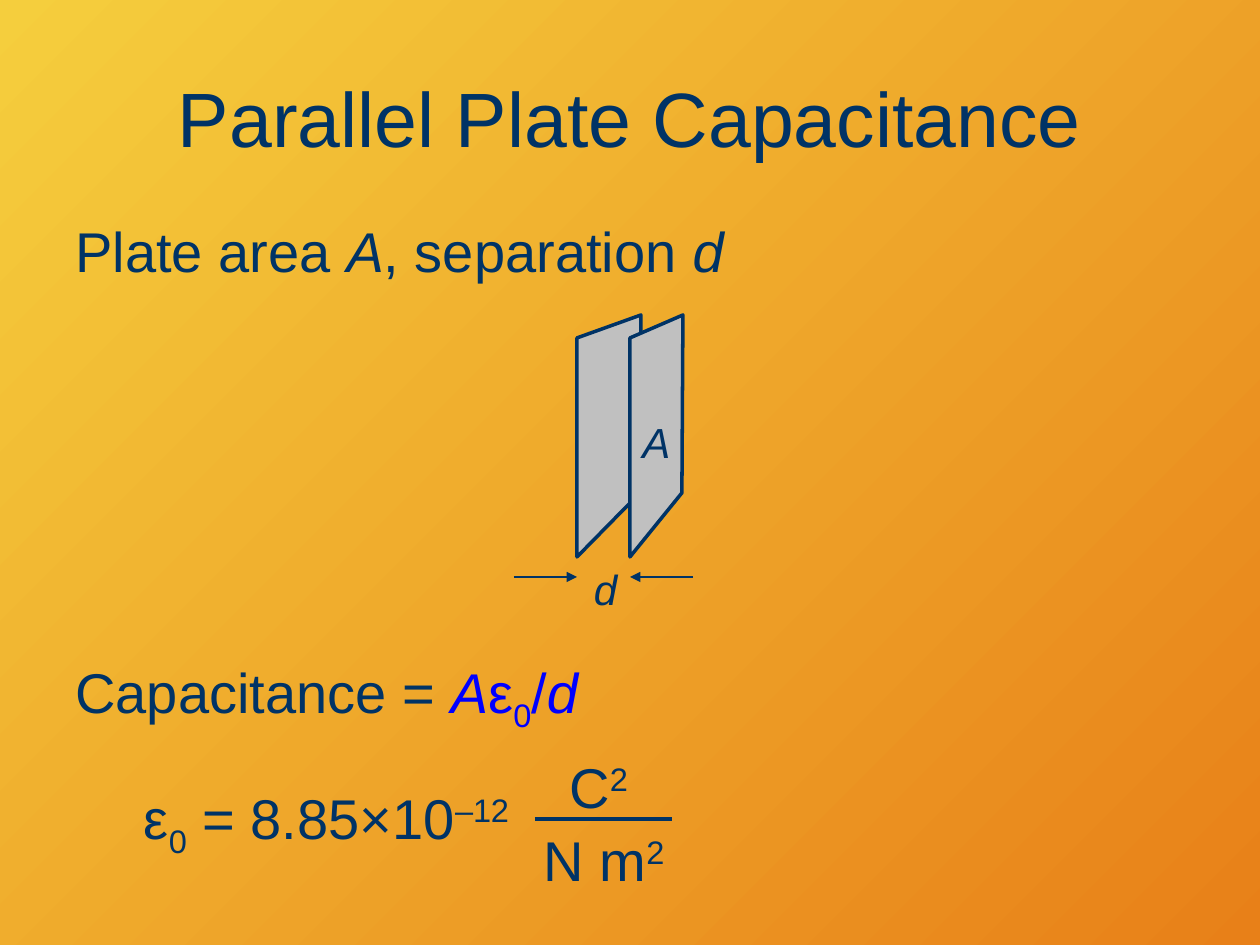
from lxml import etree
from pptx import Presentation
from pptx import util as u
from pptx.dml.color import RGBColor
from pptx.enum import shapes, text
from pptx.oxml.ns import qn

PX = 914400 / 126
NAVY = RGBColor(0x00, 0x33, 0x66)
BLUE = RGBColor(0x00, 0x00, 0xFF)
SILVER = RGBColor(0xC0, 0xC0, 0xC0)
GRADIENT = [RGBColor(0xF5, 0xCE, 0x3D), RGBColor(0xE8, 0x80, 0x18)]

PLAIN = {"color": NAVY}
ITALIC = {"color": NAVY, "italic": True}
RESULT = {"color": BLUE}
RESULT_ITALIC = {"color": BLUE, "italic": True}
RESULT_SUB = {"color": BLUE, "baseline": -25000}
SUB = {"color": NAVY, "baseline": -25000}
SUPER = {"color": NAVY, "baseline": 30000}

LEFT, CENTER = text.PP_ALIGN.LEFT, text.PP_ALIGN.CENTER
TOP, MIDDLE = text.MSO_ANCHOR.TOP, text.MSO_ANCHOR.MIDDLE

PLATES = [
    [(577, 338), (577, 557), (640, 493), (641, 315)],
    [(630, 338), (630, 557), (682, 493), (683, 315)],
]

LINES = [
    ((514, 577), (577, 577), 1.5, True),
    ((693, 577), (630, 577), 1.5, True),
    ((535, 819), (672, 819), 2.25, False),
]

TEXTS = [
    ((63, 38, 1134, 157), 44, CENTER, MIDDLE, True,
     [("Parallel Plate Capacitance", PLAIN)]),
    ((63, 210, 1134, 84), 32, LEFT, TOP, True,
     [("Plate area ", PLAIN), ("A", ITALIC), (", separation ", PLAIN), ("d", ITALIC)]),
    ((581, 557, 49, 63), 24, CENTER, TOP, False, [("d", ITALIC)]),
    ((630, 410, 53, 63), 24, LEFT, TOP, False, [("A", ITALIC)]),
    ((63, 651, 1134, 84), 32, LEFT, TOP, True,
     [("Capacitance = ", PLAIN), ("A", RESULT_ITALIC), ("ε", RESULT),
      ("0", RESULT_SUB), ("/", RESULT), ("d", RESULT_ITALIC)]),
    ((116, 777, 514, 84), 32, LEFT, TOP, True,
     [(" ε", PLAIN), ("0", SUB), (" = 8.85×10", PLAIN), ("–12", SUPER)]),
    ((546, 746, 105, 84), 32, CENTER, TOP, True, [("C", PLAIN), ("2", SUPER)]),
    ((525, 819, 158, 84), 32, CENTER, TOP, True, [("N m", PLAIN), ("2", SUPER)]),
]


def emu(*lengths):
    return [u.Emu(round(length * PX)) for length in lengths]


def paint_background(slide):
    fill = slide.background.fill
    fill.gradient()
    fill.gradient_angle = 315
    for stop, color in zip(fill.gradient_stops, GRADIENT):
        stop.color.rgb = color


def add_plate(slide, points):
    builder = slide.shapes.build_freeform(*points[0], scale=PX)
    builder.add_line_segments(points[1:], close=True)
    shape = builder.convert_to_shape()
    shape.shadow.inherit = False
    shape.fill.solid()
    shape.fill.fore_color.rgb = SILVER
    shape.line.color.rgb = NAVY
    shape.line.width = u.Pt(2)


def add_line(slide, start, end, width, arrow):
    connector = slide.shapes.add_connector(
        shapes.MSO_CONNECTOR.STRAIGHT, *emu(*start, *end))
    connector.line.color.rgb = NAVY
    connector.line.width = u.Pt(width)
    properties = connector._element.spPr
    if arrow:
        etree.SubElement(properties.find(qn("a:ln")), qn("a:tailEnd"), type="triangle")
    etree.SubElement(properties, qn("a:effectLst"))


def add_text(slide, box, size, alignment, anchor, wrap, runs):
    frame = slide.shapes.add_textbox(*emu(*box)).text_frame
    for name, value in {"word_wrap": wrap, "vertical_anchor": anchor}.items():
        setattr(frame, name, value)
    paragraph = frame.paragraphs[0]
    paragraph.alignment = alignment
    for words, style in runs:
        run = paragraph.add_run()
        run.text = words
        font_format = {"name": "Arial", "size": u.Pt(size),
                       "italic": style.get("italic", False)}
        for name, value in font_format.items():
            setattr(run.font, name, value)
        run.font.color.rgb = style["color"]
        if "baseline" in style:
            run._r.get_or_add_rPr().set("baseline", str(style["baseline"]))


def main():
    presentation = Presentation()
    presentation.slide_width, presentation.slide_height = emu(1260, 945)
    slide = presentation.slides.add_slide(presentation.slide_layouts[6])
    paint_background(slide)
    for points in PLATES:
        add_plate(slide, points)
    for line in LINES:
        add_line(slide, *line)
    for item in TEXTS:
        add_text(slide, *item)
    presentation.save("out.pptx")


if __name__ == "__main__":
    main()
